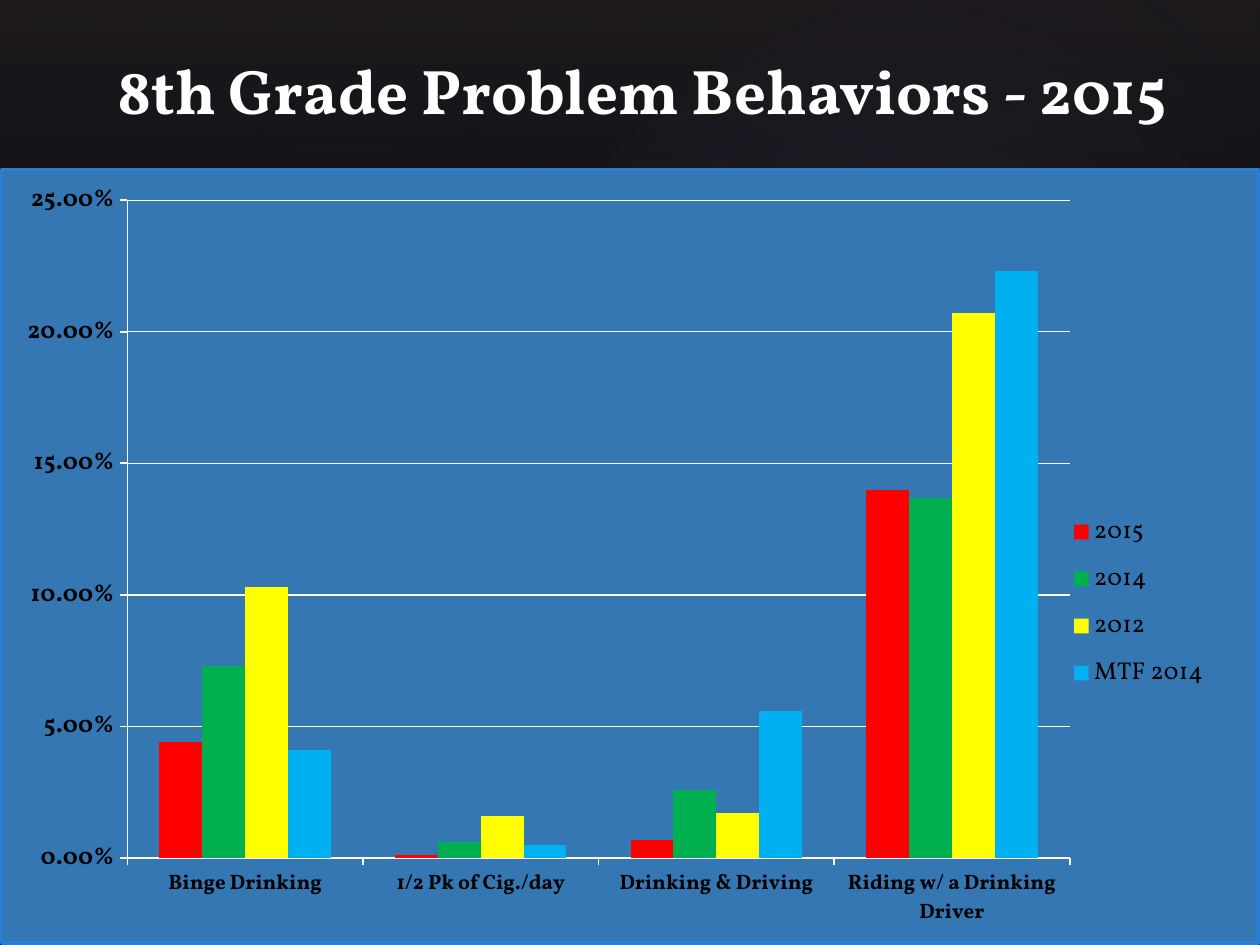
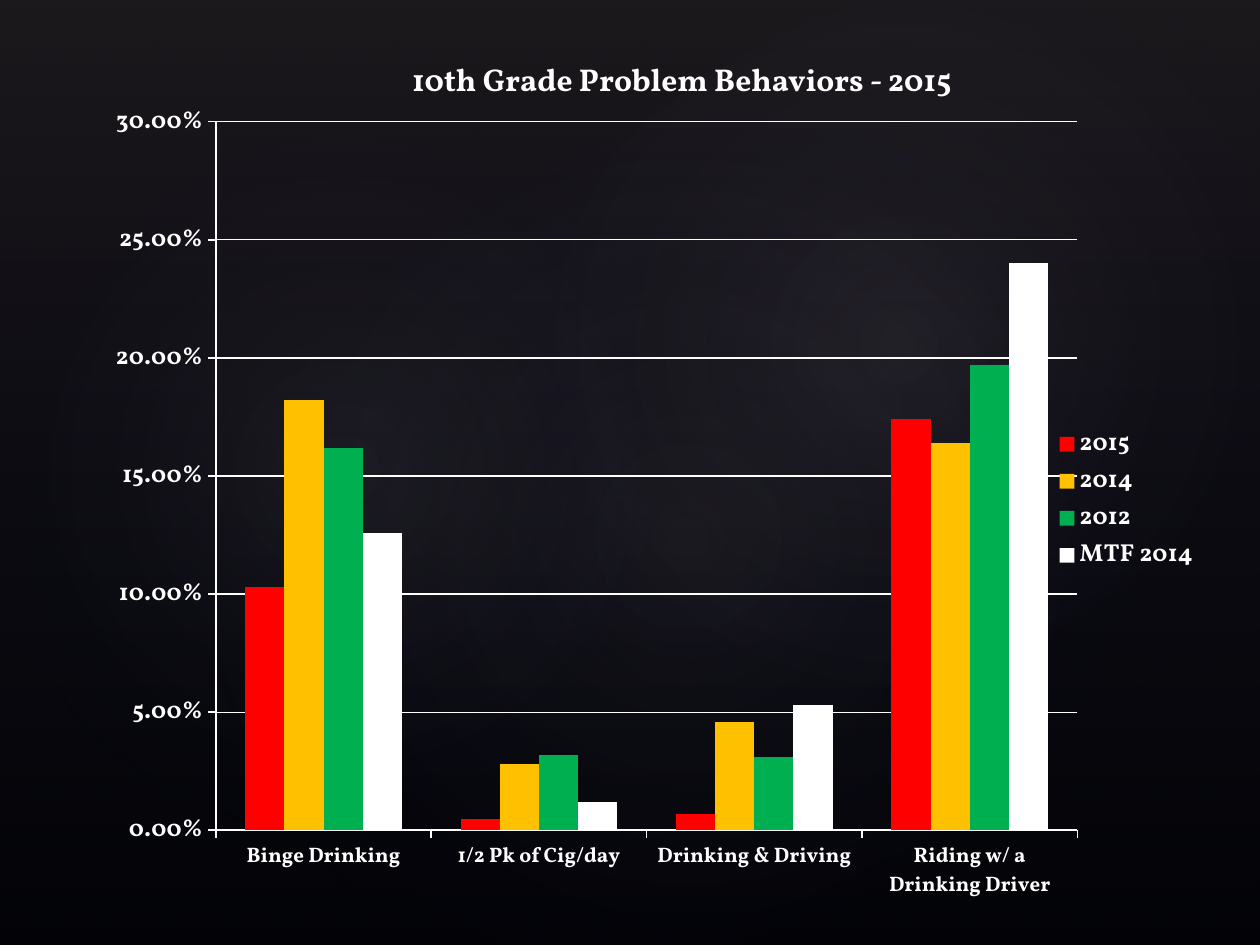
from dataclasses import dataclass

from lxml import etree
from pptx import Presentation
from pptx import util as u
from pptx.chart import data as cd
from pptx.dml.color import RGBColor
from pptx.enum import chart as ch
from pptx.enum import shapes, text
from pptx.oxml import ns, parse_xml

FACE = "Vollkorn"
BLACK = RGBColor(0x00, 0x00, 0x00)
WHITE = RGBColor(0xFF, 0xFF, 0xFF)
RED = RGBColor(0xFF, 0x00, 0x00)
GREEN = RGBColor(0x00, 0xB0, 0x50)
YELLOW = RGBColor(0xFF, 0xFF, 0x00)
GOLD = RGBColor(0xFF, 0xC0, 0x00)
SKY = RGBColor(0x00, 0xB0, 0xF0)
PANEL = RGBColor(0x34, 0x77, 0xB2)
EDGE = RGBColor(0x29, 0x7F, 0xD5)
NAVY = RGBColor(0x24, 0x28, 0x52)
HAZE = RGBColor(0xC4, 0xBC, 0xC6)
DUSK = RGBColor(0x50, 0x46, 0x52)

Box = tuple[float, float, float, float]
LINEAR = '<a:lin ang="5400000" scaled="0"/>'
RADIAL = '<a:path path="circle"><a:fillToRect l="50000" t="50000" r="50000" b="50000"/></a:path>'
YEARS = ("2015", "2014", "2012", "MTF 2014")


@dataclass
class Stop:
    place: int
    color: RGBColor
    alpha: int


@dataclass
class Glow:
    box: Box
    stops: tuple[Stop, ...]
    turn: float = 0
    form: shapes.MSO_SHAPE = shapes.MSO_SHAPE.OVAL
    course: str = RADIAL


@dataclass
class Page:
    title: str
    head: Box
    size: int
    frame: Box
    plot: Box
    key: Box
    ink: RGBColor
    bold: bool
    top: float
    packs: str
    tints: tuple[RGBColor, ...]
    rows: tuple[tuple[float, ...], ...]
    panel: bool


def haze(alpha: int) -> tuple[Stop, ...]:
    return Stop(0, HAZE, alpha), Stop(58, NAVY, 0)


GLOWS = (
    Glow((0, 0, 10, 7.5), (Stop(0, DUSK, 36), Stop(100, NAVY, 10)),
         form=shapes.MSO_SHAPE.RECTANGLE, course=LINEAR),
    Glow((1.5, 1.14, 7.92, 6.24), haze(7), 328.7),
    Glow((-0.3, 1.28, 6.06, 4.9), haze(8), 294.3),
    Glow((3.58, 0.13, 7.09, 5.2), haze(8), 328.7),
)

PAGES = (
    Page("8th Grade Problem Behaviors - 2015", (0.83, 0.36, 8.58, 0.71), 36,
         (0, 1.33, 10, 6.17), (0.1, 0.04, 0.75, 0.85), (0.84, 0.43, 0.13, 0.26),
         BLACK, False, 0.25, "1/2 Pk of Cig./day", (RED, GREEN, YELLOW, SKY),
         ((0.044, 0.001, 0.007, 0.14), (0.073, 0.006, 0.026, 0.137),
          (0.103, 0.016, 0.017, 0.207), (0.041, 0.005, 0.056, 0.223)), True),
    Page("10th Grade Problem Behaviors - 2015", (3.17, 0.43, 4.63, 0.4), 18,
         (0.92, 0.83, 8.67, 6.33), (0.09, 0.02, 0.79, 0.89), (0.86, 0.4, 0.13, 0.19),
         WHITE, True, 0.3, "1/2 Pk of Cig/day", (RED, GOLD, GREEN, WHITE),
         ((0.103, 0.005, 0.007, 0.174), (0.182, 0.028, 0.046, 0.164),
          (0.162, 0.032, 0.031, 0.197), (0.126, 0.012, 0.053, 0.24)), False),
)


def adjust(item, form: dict) -> None:
    for name, value in form.items():
        setattr(item, name, value)


def inches(box: Box) -> list[u.Length]:
    return [u.Inches(side) for side in box]


def style(font, size: int, ink: RGBColor, bold: bool) -> None:
    adjust(font, {"name": FACE, "size": u.Pt(size), "bold": bold})
    font.color.rgb = ink


def stroke(line, color: RGBColor, width: float) -> None:
    line.color.rgb = color
    line.width = u.Pt(width)


def blend(glow: Glow) -> etree._Element:
    stops = "".join(
        f'<a:gs pos="{s.place * 1000}"><a:srgbClr val="{s.color}">'
        f'<a:alpha val="{s.alpha * 1000}"/></a:srgbClr></a:gs>' for s in glow.stops)
    return parse_xml(f'<a:gradFill {ns.nsdecls("a")} rotWithShape="1">'
                     f'<a:gsLst>{stops}</a:gsLst>{glow.course}</a:gradFill>')


def backdrop(deck, slide) -> None:
    master = deck.slide_master
    fill = master.background.fill
    fill.solid()
    fill.fore_color.rgb = BLACK
    for spot, glow in enumerate(GLOWS):
        shape = slide.shapes.add_shape(glow.form, *inches(glow.box))
        shape.rotation = glow.turn
        shape.shadow.inherit = False
        shape.line.fill.background()
        shape.fill.background()
        props = shape.element.spPr
        props.replace(props.find(ns.qn("a:noFill")), blend(glow))
        shape.element.nvSpPr.cNvPr.id = 100 + spot
        master.shapes.element.insert(2 + spot, shape.element)


def arrange(part, box: Box, spot: int, inner: bool) -> None:
    for old in part.findall(ns.qn("c:layout")):
        part.remove(old)
    target = '<c:layoutTarget val="inner"/>' if inner else ""
    modes = "".join(f'<c:{side}Mode val="edge"/>' for side in "xy")
    sides = "".join(f'<c:{side} val="{size}"/>' for side, size in zip("xywh", box))
    part.insert(spot, parse_xml(
        f'<c:layout {ns.nsdecls("c")}><c:manualLayout>{target}{modes}{sides}'
        '</c:manualLayout></c:layout>'))


def paint(chart, panel: bool) -> None:
    look = "<a:noFill/><a:ln><a:noFill/></a:ln>"
    if panel:
        look = (f'<a:solidFill><a:srgbClr val="{PANEL}"/></a:solidFill>'
                f'<a:ln w="{u.Pt(2)}"><a:solidFill><a:srgbClr val="{EDGE}"/>'
                '</a:solidFill></a:ln>')
    chart.element.find(ns.qn("c:txPr")).addprevious(
        parse_xml(f'<c:spPr {ns.nsdecls("c", "a")}>{look}</c:spPr>'))


def plot(slide, page: Page) -> None:
    data = cd.CategoryChartData(number_format="0.00%")
    data.categories = ("Binge Drinking", page.packs, "Drinking & Driving",
                       "Riding w/ a Drinking Driver")
    for year, row in zip(YEARS, page.rows):
        data.add_series(year, row)
    chart = slide.shapes.add_chart(
        ch.XL_CHART_TYPE.COLUMN_CLUSTERED, *inches(page.frame), data).chart
    adjust(chart, {"has_title": False, "has_legend": True})
    style(chart.font, 10, page.ink, False)
    paint(chart, page.panel)

    bars = chart.plots[0]
    adjust(bars, {"gap_width": 150, "overlap": 0, "vary_by_categories": False})
    for series, tint in zip(bars.series, page.tints):
        series.invert_if_negative = False
        series.format.fill.solid()
        series.format.fill.fore_color.rgb = tint

    for axis, size in ((chart.category_axis, 12), (chart.value_axis, 14)):
        adjust(axis, {"major_tick_mark": ch.XL_TICK_MARK.OUTSIDE,
                      "minor_tick_mark": ch.XL_TICK_MARK.NONE})
        style(axis.tick_labels.font, size, page.ink, True)
        stroke(axis.format.line, WHITE, 1)
    scale = chart.value_axis
    adjust(scale, {"minimum_scale": 0, "maximum_scale": page.top,
                   "major_unit": 0.05, "has_major_gridlines": True})
    adjust(scale.tick_labels, {"number_format": "0.00%",
                               "number_format_is_linked": False})
    stroke(scale.major_gridlines.format.line, WHITE, 0.75)

    key = chart.legend
    adjust(key, {"position": ch.XL_LEGEND_POSITION.RIGHT, "include_in_layout": False})
    style(key.font, 14, page.ink, page.bold)
    arrange(chart.element.find(".//" + ns.qn("c:plotArea")), page.plot, 0, True)
    arrange(chart.element.find(".//" + ns.qn("c:legend")), page.key, 1, False)


def label(slide, page: Page) -> None:
    title = slide.shapes.title
    adjust(title, dict(zip(("left", "top", "width", "height"), inches(page.head))))
    frame = title.text_frame
    frame.text = page.title
    adjust(frame, {"word_wrap": False, "auto_size": text.MSO_AUTO_SIZE.NONE,
                   "vertical_anchor": text.MSO_ANCHOR.TOP})
    line = frame.paragraphs[0]
    line.alignment = text.PP_ALIGN.LEFT
    style(line.runs[0].font, page.size, WHITE, True)


def main() -> None:
    deck = Presentation()
    adjust(deck, {"slide_width": u.Inches(10), "slide_height": u.Inches(7.5)})
    for count, page in enumerate(PAGES):
        slide = deck.slides.add_slide(deck.slide_layouts[5])
        if count == 0:
            backdrop(deck, slide)
        label(slide, page)
        plot(slide, page)
    deck.save("out.pptx")


if __name__ == "__main__":
    main()
